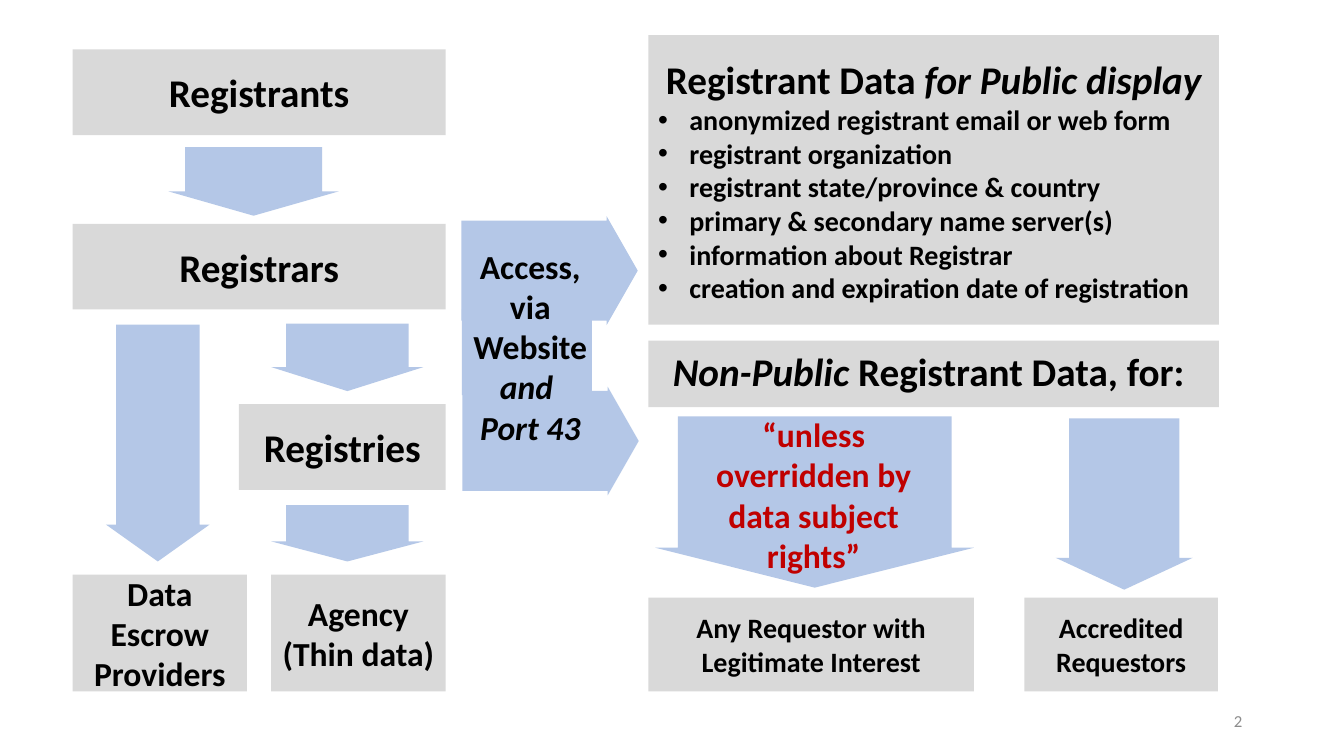
"""Build a slide on access to public and non-public registrant data."""
from dataclasses import dataclass

import pptx
import pptx.dml.color
import pptx.enum.shapes
import pptx.enum.text
import pptx.oxml
import pptx.oxml.ns
import pptx.util

PX = 9144
GREY, BLUE, BLACK, RED, PALE = "D9D9D9", "B4C7E7", "000000", "C00000", "8C8C8C"
ALIGN = pptx.enum.text.PP_ALIGN
SHAPE = pptx.enum.shapes.MSO_SHAPE


@dataclass(frozen=True)
class Frame:
    """Left, top, width and height in px."""
    left: int
    top: int
    width: int
    height: int

    def emu(self) -> list[pptx.util.Emu]:
        """Return the four lengths in EMU."""
        return [pptx.util.Emu(n * PX) for n in (self.left, self.top, self.width, self.height)]


@dataclass(frozen=True)
class Line:
    """One paragraph; each phrase is a text and whether it is italic."""
    phrases: tuple[tuple[str, bool], ...]
    size: int
    bullet: bool = False
    color: str = BLACK
    bold: bool = True
    align: ALIGN = ALIGN.CENTER


@dataclass(frozen=True)
class Block:
    """A grey box or a bare label with its paragraphs."""
    frame: Frame
    lines: tuple[Line, ...] = ()


@dataclass(frozen=True)
class Arrow:
    """A block arrow, turned by a number of degrees."""
    frame: Frame
    shaft: float = 0.804
    head: float = 0.356
    turn: int = 180


def plain(text: str, size: int, **style) -> Line:
    """Return a paragraph without italics."""
    return Line(((text, False),), size, **style)


PUBLIC_DATA = (
    "anonymized registrant email or web form",
    "registrant organization",
    "registrant state/province & country",
    "primary & secondary name server(s)",
    "information about Registrar",
    "creation and expiration date of registration",
)
BOXES = (
    Block(Frame(72, 49, 370, 85), (plain("Registrants", 28),)),
    Block(Frame(72, 222, 370, 85), (plain("Registrars", 28),)),
    Block(Frame(237, 401, 205, 85), (plain("Registries", 28),)),
    Block(Frame(72, 570, 173, 116), (plain("Data Escrow Providers", 24),)),
    Block(Frame(269, 570, 173, 116), (plain("Agency (Thin data)", 24),)),
    Block(Frame(643, 35, 566, 287), (
        Line((("Registrant Data ", False), ("for Public display", True)), 28),
        *(plain(item, 20, bullet=True, align=ALIGN.LEFT) for item in PUBLIC_DATA))),
    Block(Frame(643, 338, 566, 66)),
    Block(Frame(643, 593, 323, 93), (plain("Any Requestor with Legitimate Interest", 20),)),
    Block(Frame(1016, 593, 192, 93), (plain("Accredited Requestors", 20),)),
)
ARROWS = (
    Arrow(Frame(167, 146, 169, 68)),
    Arrow(Frame(269, 321, 151, 67)),
    Arrow(Frame(105, 322, 103, 235)),
    Arrow(Frame(269, 501, 151, 56)),
    Arrow(Frame(491, 181, 108, 175), 0.919, 0.286, 90),
    Arrow(Frame(492, 350, 108, 175), 0.919, 0.286, 90),
    Arrow(Frame(1047, 415, 136, 170), 0.804, 0.233),
    Arrow(Frame(650, 413, 316, 170), 0.859, 0.233),
)
ACCESS_BRIDGE = Frame(458, 307, 129, 85)
LABELS = (
    Block(Frame(643, 331, 556, 73),
          (Line((("Non-Public", True), (" Registrant Data, for:", False)), 28),)),
    Block(Frame(448, 270, 156, 147),
          (Line((("Access, via Website ", False), ("and ", True)), 24),
           Line((("Port 43", True),), 24))),
    Block(Frame(686, 433, 242, 115),
          (plain("“unless overridden by data subject rights”", 24, color=RED),)),
    Block(Frame(942, 695, 300, 40),
          (plain("2", 12, color=PALE, bold=False, align=ALIGN.RIGHT),)),
)


def rgb(color: str) -> pptx.dml.color.RGBColor:
    """Turn a hex string into a colour."""
    return pptx.dml.color.RGBColor.from_string(color)


def add_bullet(paragraph) -> None:
    """Give a paragraph a hanging round bullet."""
    properties = paragraph._p.get_or_add_pPr()
    properties.set("marL", str(31 * PX))
    properties.set("indent", str(-31 * PX))
    for tag, attribute, value in (("buFont", "typeface", "Arial"), ("buChar", "char", "•")):
        mark = pptx.oxml.parse_xml(f'<a:{tag} {pptx.oxml.ns.nsdecls("a")} {attribute}="{value}"/>')
        properties.append(mark)


def write(text_frame, lines: tuple[Line, ...]) -> None:
    """Fill a text frame with formatted paragraphs."""
    text_frame.word_wrap = True
    text_frame.vertical_anchor = pptx.enum.text.MSO_ANCHOR.MIDDLE
    for index, line in enumerate(lines):
        paragraph = text_frame.add_paragraph() if index else text_frame.paragraphs[0]
        paragraph.text = line.phrases[0][0]
        for text, _ in line.phrases[1:]:
            paragraph.add_run().text = text
        paragraph.alignment = line.align
        if line.bullet:
            add_bullet(paragraph)
        for run, (_, italic) in zip(paragraph.runs, line.phrases):
            run.font.name = "Calibri"
            run.font.size = pptx.util.Pt(line.size)
            run.font.bold = line.bold
            run.font.italic = italic
            run.font.color.rgb = rgb(line.color)


def add_flat(slide, kind: SHAPE, frame: Frame, color: str):
    """Add a filled shape without line or shadow."""
    shape = slide.shapes.add_shape(kind, *frame.emu())
    shape.shadow.inherit = False
    shape.fill.solid()
    shape.fill.fore_color.rgb = rgb(color)
    shape.line.fill.background()
    return shape


def add_arrow(slide, arrow: Arrow) -> None:
    """Add a turned block arrow."""
    shape = add_flat(slide, SHAPE.UP_ARROW, arrow.frame, BLUE)
    shape.rotation = arrow.turn
    shape.adjustments[0] = arrow.shaft
    shape.adjustments[1] = arrow.head


def main() -> None:
    """Build and save the slide."""
    deck = pptx.Presentation()
    deck.slide_width = pptx.util.Emu(1333 * PX)
    deck.slide_height = pptx.util.Emu(750 * PX)
    slide = deck.slides.add_slide(deck.slide_layouts[6])
    for box in BOXES:
        write(add_flat(slide, SHAPE.RECTANGLE, box.frame, GREY).text_frame, box.lines)
    for arrow in ARROWS:
        add_arrow(slide, arrow)
    add_flat(slide, SHAPE.RECTANGLE, ACCESS_BRIDGE, BLUE)
    for label in LABELS:
        write(slide.shapes.add_textbox(*label.frame.emu()).text_frame, label.lines)
    deck.save("out.pptx")


if __name__ == "__main__":
    main()
